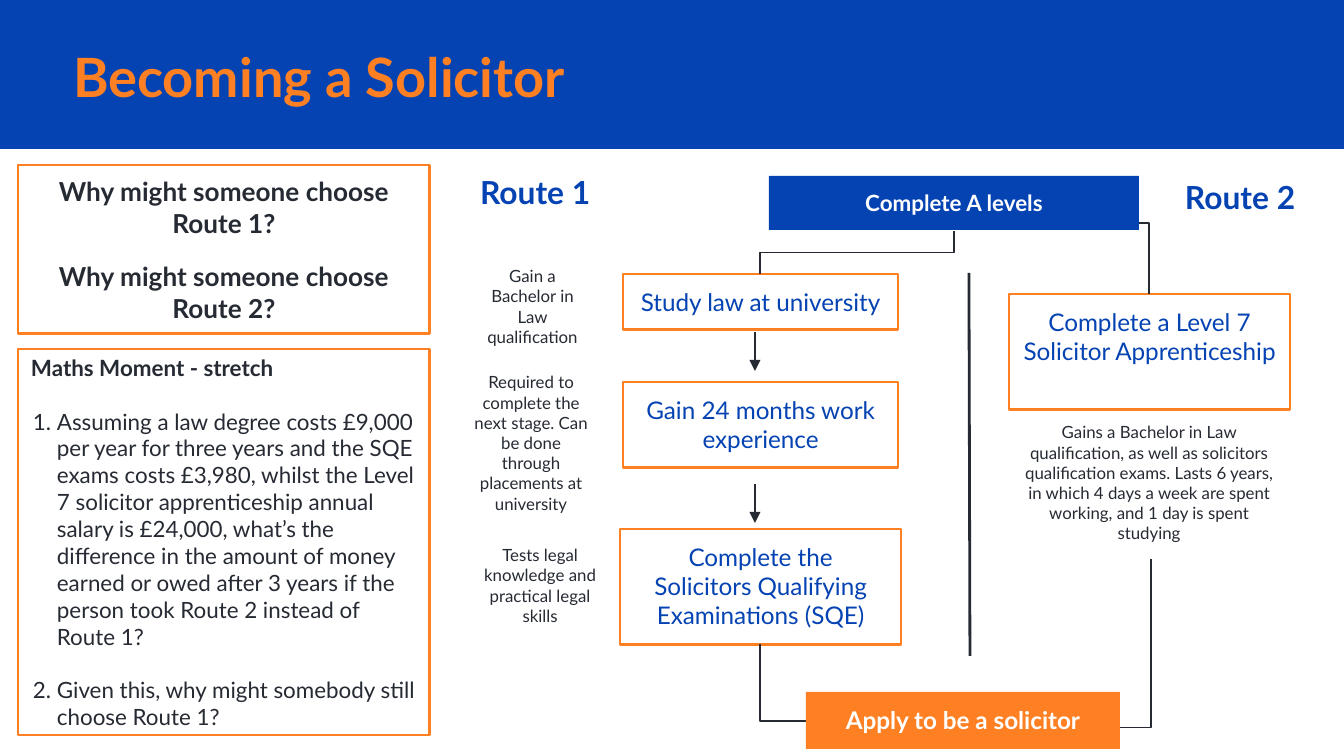
from lxml.etree import SubElement
from pptx import Presentation
from pptx.dml.color import RGBColor
from pptx.enum.shapes import MSO_CONNECTOR, MSO_SHAPE
from pptx.enum.text import MSO_ANCHOR, MSO_AUTO_SIZE, PP_ALIGN
from pptx.oxml.ns import qn
from pptx.util import Pt

EMU_PER_PX = 9144000 / 1344
COLOURS = {"blue": "0543B3", "orange": "FF8022", "dark": "262A33", "white": "FFFFFF"}
FONT = "Lato"
INSET = 13


def px(length):
    return round(length * EMU_PER_PX)


def colour(name):
    return RGBColor.from_string(COLOURS[name])


class SlideBuilder:
    """Holds the style and the current slide."""

    def __init__(self, page):
        self.page = page
        self.shapes = page.shapes

    def set_text(self, shape, text, size, ink, bold=False, align=PP_ALIGN.CENTER,
                 anchor=MSO_ANCHOR.TOP, gap=0):
        """Fill a shape with text; gap is the space in points between paragraphs."""
        frame = shape.text_frame
        frame.text = text
        frame.word_wrap = True
        frame.auto_size = MSO_AUTO_SIZE.NONE
        frame.vertical_anchor = anchor
        frame.margin_left = frame.margin_right = px(INSET)
        frame.margin_top = frame.margin_bottom = px(INSET)
        for index, para in enumerate(frame.paragraphs):
            para.alignment = align
            para.space_before = Pt(gap if index else 0)
            for span in para.runs:
                span.font.name = FONT
                span.font.size = Pt(size)
                span.font.bold = bold
                span.font.color.rgb = colour(ink)
        return frame

    def title(self, text, left, top, width, height):
        title = self.shapes.title
        title.left, title.top = px(left), px(top)
        title.width, title.height = px(width), px(height)
        self.set_text(title, text, 29, "orange", True, PP_ALIGN.LEFT, MSO_ANCHOR.MIDDLE)

    def box(self, left, top, width, height, fill=None, outline=None):
        box = self.shapes.add_shape(
            MSO_SHAPE.RECTANGLE, px(left), px(top), px(width), px(height))
        box.shadow.inherit = False
        if fill:
            box.fill.solid()
            box.fill.fore_color.rgb = colour(fill)
        else:
            box.fill.background()
        if outline:
            box.line.color.rgb = colour(outline)
            box.line.width = Pt(1.5)
        else:
            box.line.fill.background()
        return box

    def band(self, height):
        """Add the header band behind everything else."""
        band = self.box(0, 0, 1344, height, fill="blue")
        self.shapes._spTree.insert(2, band._element)

    def label(self, text, left, top, width, height, size, ink, **style):
        label = self.shapes.add_textbox(px(left), px(top), px(width), px(height))
        self.set_text(label, text, size, ink, **style)

    def line(self, x1, y1, x2, y2, weight=0.75, kind=MSO_CONNECTOR.STRAIGHT):
        line = self.shapes.add_connector(kind, px(x1), px(y1), px(x2), px(y2))
        line.line.color.rgb = colour("dark")
        line.line.width = Pt(weight)
        SubElement(line._element.spPr, qn("a:effectLst"))
        return line

    def arrow(self, x1, y1, x2, y2):
        line = self.line(x1, y1, x2, y2)
        SubElement(line.line._get_or_add_ln(), qn("a:tailEnd"), type="triangle")

    def elbow(self, x1, y1, x2, y2, bend=None):
        """Leave vertically; bend is where a three-part elbow turns, as a share of its run."""
        run, rise = abs(y2 - y1), abs(x2 - x1)
        left, top = (x1 + x2 - run) / 2, (y1 + y2 - rise) / 2
        elbow = self.line(left, top, left + run, top + rise, kind=MSO_CONNECTOR.ELBOW)
        rightward, downward = x2 > x1, y2 > y1
        elbow.rotation = 270 if rightward else 90
        if rightward == downward:
            elbow._element.spPr.xfrm.set("flipH", "1")
        geometry = elbow._element.spPr.find(qn("a:prstGeom"))
        if bend is None:
            geometry.set("prst", "bentConnector2")
        else:
            guides = geometry.find(qn("a:avLst"))
            if guides is None:
                guides = SubElement(geometry, qn("a:avLst"))
            SubElement(guides, qn("a:gd"), name="adj1", fmla=f"val {round(bend * 100000)}")

    def number(self, para):
        properties = para._p.get_or_add_pPr()
        properties.set("marL", str(px(26)))
        properties.set("indent", str(px(-24)))
        SubElement(properties, qn("a:buFont"), typeface=FONT)
        SubElement(properties, qn("a:buAutoNum"), type="arabicPeriod")


def main():
    deck = Presentation()
    deck.slide_width, deck.slide_height = px(1344), px(756)
    slide = SlideBuilder(deck.slides.add_slide(deck.slide_layouts[5]))

    slide.band(149)
    slide.title("Becoming a Solicitor", 60, 30, 1256, 91)

    slide.label("Route 1", 467, 160, 148, 66, 17, "blue", bold=True, align=PP_ALIGN.LEFT)
    slide.label("Route 2", 1172, 165, 148, 66, 17, "blue", bold=True, align=PP_ALIGN.LEFT)
    slide.line(969, 273, 970, 656, weight=1.5)

    steps = [
        ("Study law at university", 623, 274, 275, 56),
        ("Gain 24 months work experience", 623, 382, 275, 86),
        ("Complete the\nSolicitors Qualifying Examinations (SQE)", 620, 529, 281, 116),
        ("Complete a Level 7\nSolicitor Apprenticeship", 1009, 294, 281, 116),
    ]
    for text, *place in steps:
        slide.set_text(slide.box(*place, outline="orange"), text, 13, "blue")

    details = [
        ("Gain a Bachelor in Law qualification", 466, 253, 133, 109),
        ("Required to complete the next stage. Can be done through placements at university",
         457, 359, 148, 170),
        ("Tests legal knowledge and practical legal skills", 466, 532, 148, 109),
        ("Gains a Bachelor in Law qualification, as well as solicitors qualification exams. "
         "Lasts 6 years, in which 4 days a week are spent working, and 1 day is spent studying",
         1006, 409, 286, 149),
    ]
    for text, *place in details:
        slide.label(text, *place, 9, "dark")

    for top in (332, 484):
        slide.arrow(755, top, 755, top + 39)
    slide.elbow(760, 274, 954, 231, bend=0.5)
    slide.elbow(1151, 559, 1109, 726, bend=1.01)
    slide.elbow(1149, 294, 983, 223)
    slide.elbow(760, 644, 806, 721)

    start = slide.box(769, 176, 370, 54, fill="blue")
    slide.set_text(start, "Complete A levels", 12, "white", bold=True)
    finish = slide.box(806, 692, 314, 57, fill="orange")
    slide.set_text(finish, "Apply to be a solicitor", 13, "white", bold=True)

    questions = slide.box(18, 165, 412, 169, outline="orange")
    slide.set_text(
        questions, "Why might someone choose Route 1?\nWhy might someone choose Route 2?",
        14, "dark", bold=True, anchor=MSO_ANCHOR.MIDDLE, gap=12)

    maths = slide.box(18, 349, 412, 386, fill="white", outline="orange")
    frame = slide.set_text(
        maths,
        "Maths Moment - stretch\n"
        "Assuming a law degree costs £9,000 per year for three years and the SQE exams costs "
        "£3,980, whilst the Level 7 solicitor apprenticeship annual salary is £24,000, what’s "
        "the difference in the amount of money earned or owed after 3 years if the person took "
        "Route 2 instead of Route 1?\n"
        "Given this, why might somebody still choose Route 1?",
        12, "dark", align=PP_ALIGN.LEFT, anchor=MSO_ANCHOR.MIDDLE, gap=14.4)
    frame.margin_top = frame.margin_bottom = px(4)
    heading, *tasks = frame.paragraphs
    heading.runs[0].font.bold = True
    for task in tasks:
        slide.number(task)

    deck.save("out.pptx")


if __name__ == "__main__":
    main()
